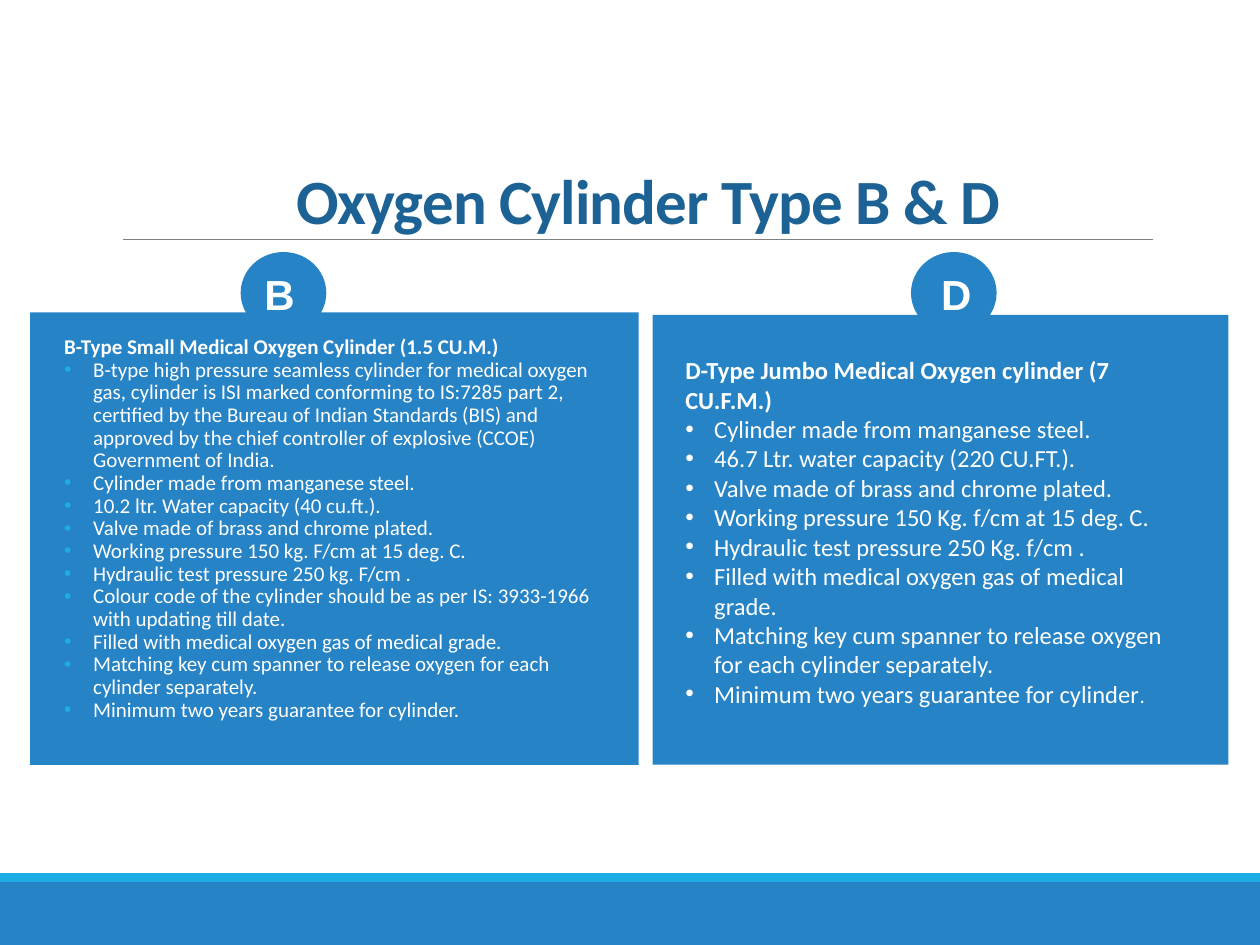
from dataclasses import dataclass

import pptx
import pptx.dml.color
import pptx.enum.shapes
import pptx.enum.text
import pptx.oxml.ns
import pptx.util
from lxml import etree

Inches, Pt = pptx.util.Inches, pptx.util.Pt
SHAPE = pptx.enum.shapes.MSO_SHAPE
ANCHOR = pptx.enum.text.MSO_ANCHOR
ALIGN = pptx.enum.text.PP_ALIGN
qn = pptx.oxml.ns.qn


@dataclass(frozen=True)
class Theme:
    blue: str = "2683C6"
    cyan: str = "1CADE4"
    navy: str = "1D6294"
    grey: str = "808080"
    white: str = "FFFFFF"
    body_font: str = "Calibri"
    badge_font: str = "Arial"
    title: float = 36
    badge: float = 24
    large: float = 14
    small: float = 12


T = Theme()

B_HEADING = "B-Type Small Medical Oxygen Cylinder (1.5 CU.M.)"
B_POINTS = [
    "B-type high pressure seamless cylinder for medical oxygen gas, cylinder is ISI marked "
    "conforming to IS:7285 part 2, certified by the Bureau of Indian Standards (BIS) and "
    "approved by the chief controller of explosive (CCOE) Government of India.",
    "Cylinder made from manganese steel.",
    "10.2 ltr. Water capacity (40 cu.ft.).",
    "Valve made of brass and chrome plated.",
    "Working pressure 150 kg. F/cm at 15 deg. C.",
    "Hydraulic test pressure 250 kg. F/cm .",
    "Colour code of the cylinder should be as per IS: 3933-1966 with updating till date.",
    "Filled with medical oxygen gas of medical grade.",
    "Matching key cum spanner to release oxygen for each cylinder separately.",
    "Minimum two years guarantee for cylinder.",
]
D_HEADING = "D-Type Jumbo Medical Oxygen cylinder (7 CU.F.M.)"
D_POINTS = [
    "Cylinder made from manganese steel.",
    "46.7 Ltr. water capacity (220 CU.FT.).",
    "Valve made of brass and chrome plated.",
    "Working pressure 150 Kg. f/cm at 15 deg. C.",
    "Hydraulic test pressure 250 Kg. f/cm .",
    "Filled with medical oxygen gas of medical grade.",
    "Matching key cum spanner to release oxygen for each cylinder separately.",
    "Minimum two years guarantee for cylinder",
]


def rgb(color):
    return pptx.dml.color.RGBColor.from_string(color)


def add_block(s, box, color, kind=SHAPE.RECTANGLE):
    sp = s.shapes.add_shape(kind, *map(Inches, box))
    sp.shadow.inherit = False
    sp.fill.solid()
    sp.fill.fore_color.rgb = rgb(color)
    sp.line.fill.background()


def add_text_frame(s, box, inset=True, wrap=True):
    tf = s.shapes.add_textbox(*map(Inches, box)).text_frame
    tf.word_wrap = wrap
    if not inset:
        tf.margin_left = tf.margin_right = tf.margin_top = tf.margin_bottom = 0
    return tf


def add_run(p, text, size, color=T.white, bold=False, font=T.body_font):
    r = p.add_run()
    r.text = text
    r.font.name, r.font.size, r.font.bold = font, Pt(size), bold
    r.font.color.rgb = rgb(color)
    return r


def set_bullet(p, char, hang, color):
    pPr = p._p.get_or_add_pPr()
    pPr.set("marL", str(Inches(hang)))
    pPr.set("indent", str(-Inches(hang)))
    clr = etree.SubElement(pPr, qn("a:buClr"))
    etree.SubElement(clr, qn("a:srgbClr"), val=color)
    etree.SubElement(pPr, qn("a:buFont"), typeface="Arial")
    etree.SubElement(pPr, qn("a:buChar"), char=char)


def add_title(s, box, text):
    tf = add_text_frame(s, box, inset=False)
    tf.vertical_anchor = ANCHOR.BOTTOM
    p = tf.paragraphs[0]
    set_bullet(p, " ", 0.07, T.cyan)
    p.alignment = ALIGN.CENTER
    p.line_spacing, p.space_after = Pt(30), Pt(13.5)
    r = add_run(p, text, T.title, T.navy, bold=True)
    r.font._element.set("spc", "-50")


def add_title_rule(s, left, top, width):
    line = s.shapes.add_connector(pptx.enum.shapes.MSO_CONNECTOR.STRAIGHT, Inches(left),
                                  Inches(top), Inches(left + width), Inches(top))
    line.line.color.rgb = rgb(T.grey)
    line.line.width = Pt(0.5)
    etree.SubElement(line._element.spPr, qn("a:effectLst"))


def add_footer(s, left, top, width, height):
    stripe = 0.07
    add_block(s, (left, top + stripe, width, height - stripe), T.blue)
    add_block(s, (left, top, width, stripe), T.cyan)


def add_details(s, box, heading, points, size, bullet_color, spacing=1.0, inset=True):
    """Bold heading with bulleted points; returns the last paragraph."""
    tf = add_text_frame(s, box, inset)
    p = tf.paragraphs[0]
    p.line_spacing = spacing
    add_run(p, heading, size, bold=True)
    for point in points:
        p = tf.add_paragraph()
        set_bullet(p, "•", 0.23, bullet_color)
        p.line_spacing = spacing
        add_run(p, point, size)
    return p


def add_badge(s, left, top, letter, text_offset):
    add_block(s, (left, top, 0.68, 0.65), T.blue, SHAPE.OVAL)
    tf = add_text_frame(s, (left + text_offset, top + 0.08, 0.45, 0.5), wrap=False)
    add_run(tf.paragraphs[0], letter, T.badge, bold=True, font=T.badge_font)


def main():
    prs = pptx.Presentation()
    prs.slide_width, prs.slide_height = Inches(10), Inches(7.5)
    s = prs.slides.add_slide(prs.slide_layouts[6])

    add_footer(s, 0, 6.93, 10, 0.57)
    add_title_rule(s, 0.98, 1.9, 8.17)
    add_block(s, (5.18, 2.5, 4.57, 3.57), T.blue)
    add_block(s, (0.24, 2.48, 4.83, 3.59), T.blue)
    add_details(s, (0.51, 2.67, 4.4, 3.22), B_HEADING, B_POINTS, T.small, T.cyan,
                spacing=0.9, inset=False)
    add_title(s, (0.99, 0.68, 8.17, 1.2), "Oxygen Cylinder Type B & D")
    last = add_details(s, (5.34, 2.77, 4.15, 2.93), D_HEADING, D_POINTS, T.large, T.white)
    add_run(last, ".", T.small)
    add_badge(s, 1.91, 2, "B", 0.09)
    add_badge(s, 7.23, 2, "D", 0.14)

    prs.save("out.pptx")


if __name__ == "__main__":
    main()
